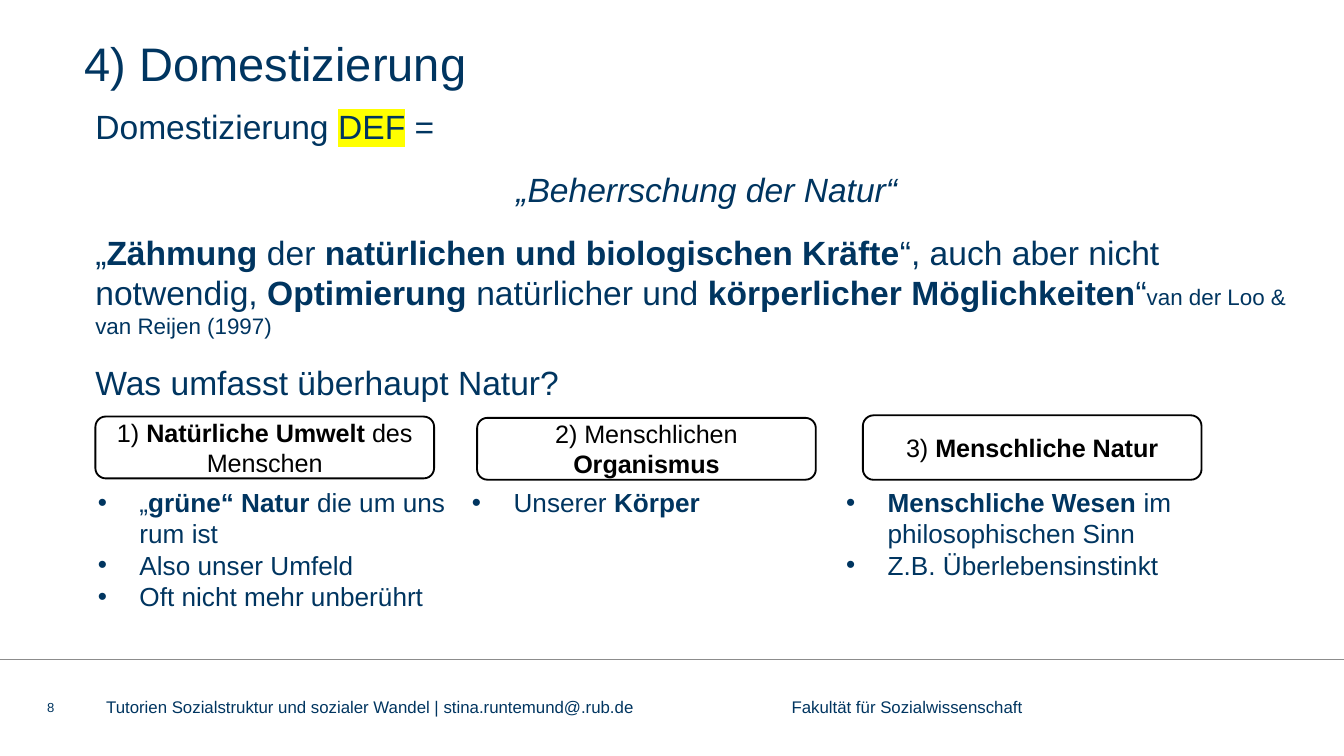
from lxml.etree import SubElement
from pptx import Presentation
from pptx.dml.color import RGBColor
from pptx.enum.shapes import MSO_CONNECTOR, MSO_SHAPE
from pptx.enum.text import MSO_ANCHOR, PP_ALIGN
from pptx.oxml.ns import qn
from pptx.util import Inches, Pt

SLIDE_WIDTH = 10
COLORS = {"navy": "003560", "black": "000000", "white": "FFFFFF",
          "rule": "8C8C8C", "marker": "FFFF00"}
BOLD = {"bold": True}
ITALIC = {"italic": True}

DEFINITION = [
    ([("Domestizierung ", {}), ("DEF", {"highlight": True}), (" =", {})], {}),
    ([("„Beherrschung der Natur“", ITALIC)], {"alignment": PP_ALIGN.CENTER}),
    ([("„", {}), ("Zähmung", BOLD), (" der ", {}),
      ("natürlichen und biologischen Kräfte", BOLD),
      ("“, auch aber nicht notwendig, ", {}), ("Optimierung", BOLD),
      (" natürlicher und ", {}), ("körperlicher Möglichkeiten", BOLD),
      ("“", {}), ("van der Loo & van Reijen (1997)", {"size": Pt(12)})], {}),
    ([("Was umfasst überhaupt Natur?", {})], {}),
]

ASPECTS = [
    ((0.71, 3.1, 2.52, 0.46),
     [("1) ", {}), ("Natürliche Umwelt ", BOLD), ("des Menschen", {})],
     [[("„", {}), ("grüne“ Natur ", BOLD), ("die um uns rum ist", {})],
      [("Also unser Umfeld", {})],
      [("Oft nicht mehr unberührt", {})]]),
    ((3.55, 3.11, 2.52, 0.46),
     [("2) Menschlichen ", {}), ("Organismus", BOLD)],
     [[("Unserer ", {}), ("Körper", BOLD)]]),
    ((6.42, 3.09, 2.52, 0.48),
     [("3) ", {}), ("Menschliche Natur", BOLD)],
     [[("Menschliche Wesen ", BOLD), ("im philosophischen Sinn", {})],
      [("Z.B. Überlebensinstinkt", {})]]),
]


def rgb(name):
    return RGBColor.from_string(COLORS[name])


def set_attributes(target, values):
    for name, value in values.items():
        setattr(target, name, value)


def add_highlight(run):
    properties = run.font._element
    highlight = SubElement(properties, qn("a:highlight"))
    SubElement(highlight, qn("a:srgbClr"), val=COLORS["marker"])
    properties.find(qn("a:latin")).addprevious(highlight)


def add_runs(paragraph, runs, size, color="navy"):
    for text, emphasis in runs:
        run = paragraph.add_run()
        run.text = text
        font_format = {"name": "Arial", "size": Pt(size), **emphasis}
        highlighted = font_format.pop("highlight", False)
        set_attributes(run.font, font_format)
        run.font.color.rgb = rgb(color)
        if highlighted:
            add_highlight(run)


def add_bullet(paragraph):
    properties = paragraph._p.get_or_add_pPr()
    properties.set("marL", str(Inches(0.31)))
    properties.set("indent", str(-Inches(0.31)))
    SubElement(properties, qn("a:buFont"), typeface="Arial")
    SubElement(properties, qn("a:buChar"), char="•")


def add_text(slide, place, paragraphs, size, inset=(0, 0),
             anchor=MSO_ANCHOR.TOP, bullets=False):
    frame = slide.shapes.add_textbox(*map(Inches, place)).text_frame
    side, edge = map(Inches, inset)
    set_attributes(frame, {
        "word_wrap": True, "vertical_anchor": anchor,
        "margin_left": side, "margin_right": side,
        "margin_top": edge, "margin_bottom": edge})
    for index, (runs, layout) in enumerate(paragraphs):
        paragraph = frame.add_paragraph() if index else frame.paragraphs[0]
        set_attributes(paragraph, layout)
        if bullets:
            add_bullet(paragraph)
        add_runs(paragraph, runs, size)


def add_heading(slide, place, runs):
    heading = slide.shapes.add_shape(
        MSO_SHAPE.ROUNDED_RECTANGLE, *map(Inches, place))
    heading.shadow.inherit = False
    heading.fill.solid()
    heading.fill.fore_color.rgb = rgb("white")
    heading.line.color.rgb = rgb("black")
    heading.line.width = Pt(1)
    set_attributes(heading.text_frame, {
        "word_wrap": True, "vertical_anchor": MSO_ANCHOR.MIDDLE})
    paragraph = heading.text_frame.paragraphs[0]
    paragraph.alignment = PP_ALIGN.CENTER
    add_runs(paragraph, runs, 13.5, "black")


def add_footer(slide):
    rule = slide.shapes.add_connector(
        MSO_CONNECTOR.STRAIGHT, 0, Inches(4.91),
        Inches(SLIDE_WIDTH), Inches(4.91))
    rule.line.color.rgb = rgb("rule")
    rule.line.width = Pt(0.5)
    SubElement(rule._element.spPr, qn("a:effectLst"))
    for left, width, text, size in (
            (0.35, 0.28, "8", 7),
            (0.79, 4.9, "Tutorien Sozialstruktur und sozialer Wandel | "
                        "stina.runtemund@.rub.de", 9),
            (5.89, 2.5, "Fakultät für Sozialwissenschaft", 9)):
        add_text(slide, (left, 5.2, width, 0.12), [([(text, {})], {})],
                 size, anchor=MSO_ANCHOR.MIDDLE)


def main():
    presentation = Presentation()
    presentation.slide_width = Inches(SLIDE_WIDTH)
    presentation.slide_height = Inches(SLIDE_WIDTH * 9 / 16)
    slide = presentation.slides.add_slide(presentation.slide_layouts[6])

    add_footer(slide)
    add_text(slide, (0.63, 0.26, 9.18, 0.34),
             [([("4) Domestizierung", {})], {})], 25.2)
    add_text(slide, (0.71, 0.79, 9.1, 4.09),
             [(runs, {"space_after": Pt(12), **layout})
              for runs, layout in DEFINITION], 18)

    column_pitch = 8.35 / 3
    for index, (place, heading, points) in enumerate(ASPECTS):
        add_heading(slide, place, heading)
        add_text(slide, (0.63 + index * column_pitch, 3.57, column_pitch + 0.2, 1.04),
                 [(runs, {}) for runs in points], 14, (0.1, 0.05), bullets=True)

    presentation.save("out.pptx")


if __name__ == "__main__":
    main()
